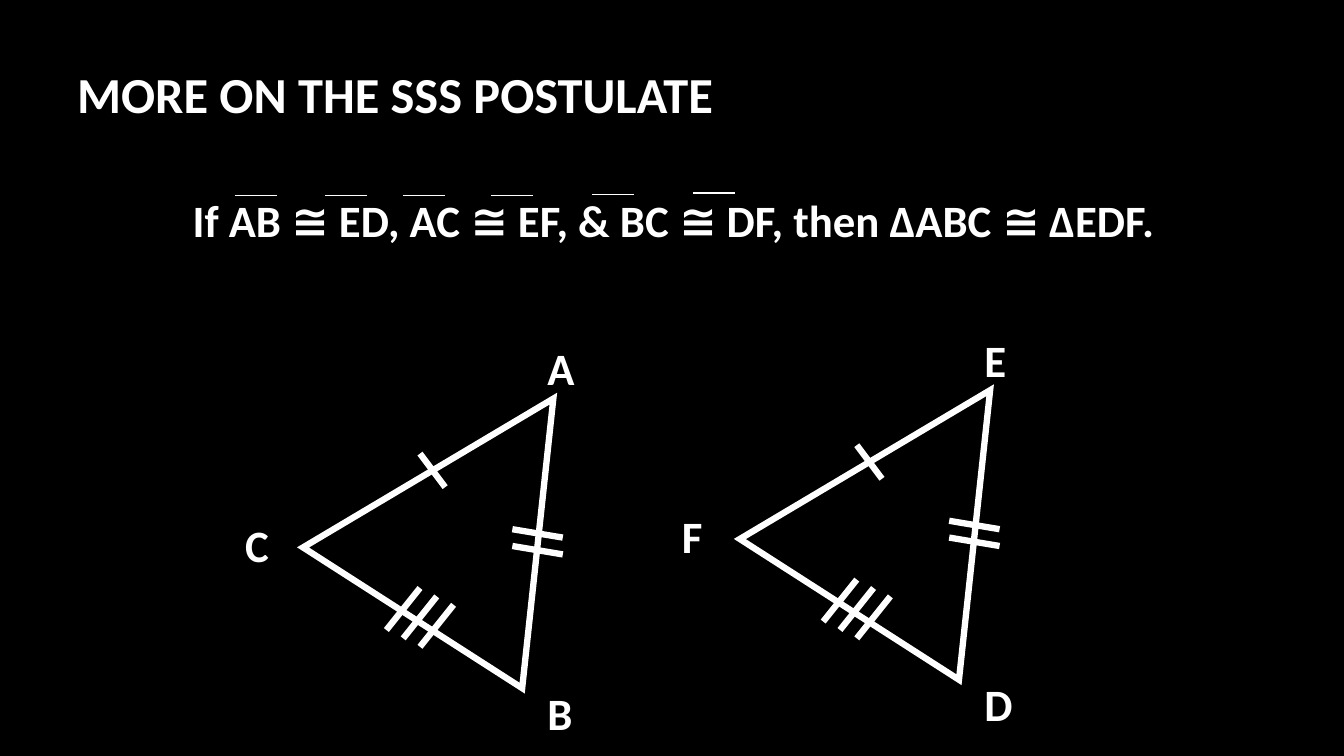
from dataclasses import dataclass
from typing import NamedTuple

from lxml.etree import SubElement as Sub
from pptx import Presentation
from pptx.dml.color import RGBColor as RGB
from pptx.enum.shapes import MSO_CONNECTOR as Conn, MSO_SHAPE as Shape
from pptx.enum.text import MSO_ANCHOR as Anchor, MSO_AUTO_SIZE as Auto
from pptx.oxml.ns import qn
from pptx.util import Emu, Pt


@dataclass(frozen=True)
class Theme:
    back: RGB = RGB(0, 0, 0)
    ink: RGB = RGB(255, 255, 255)
    font: str = "Calibri"
    title: int = 36
    body: int = 32
    side: float = 4.5
    bar: float = 1


class Mark(NamedTuple):
    x1: int
    y1: int
    x2: int
    y2: int


class Label(NamedTuple):
    text: str
    x: int
    y: int
    w: int
    h: int
    wrap: bool


class Figure(NamedTuple):
    dx: int
    dy: int
    names: str
    widths: tuple[int, int, int]


THEME = Theme()
SPOTS = ((512, 320, 60, True), (512, 648, 61, False), (224, 488, 61, False))
FIGURES = (
    Figure(0, 0, "ABC", (104, 43, 42)),
    Figure(416, -8, "EDF", (104, 46, 39)),
)
TICKS = (
    Mark(400, 432, 424, 464),
    *(Mark(488, 504 + 16 * i, 536, 512 + 16 * i) for i in range(2)),
    *(Mark(368 + 16 * i, 600 + 8 * i, 400 + 16 * i, 560 + 8 * i) for i in range(3)),
)
BARS = ((224, 186), (310, 186), (384, 186), (468, 186), (564, 185), (660, 184))


def px(n: int) -> Emu:
    return Emu(n * 9525)


def write(slide, label: Label, size: int):
    box = slide.shapes.add_textbox(*map(px, label[1:5]))
    frame = box.text_frame
    frame.word_wrap = label.wrap
    para = frame.paragraphs[0]
    para.text = label.text
    font = para.font
    font.name, font.size, font.bold = THEME.font, Pt(size), True
    font.color.rgb = THEME.ink
    return frame


def stroke(slide, mark: Mark, width: float) -> None:
    line = slide.shapes.add_connector(Conn.STRAIGHT, *map(px, mark))
    line.line.color.rgb = THEME.ink
    line.line.width = Pt(width)
    Sub(line._element.spPr, qn("a:effectLst"))


def draw(slide, fig: Figure) -> None:
    dx, dy = fig.dx, fig.dy
    tri = slide.shapes.add_shape(
        Shape.ISOSCELES_TRIANGLE, px(336 + dx), px(360 + dy), px(248), px(248)
    )
    tri.rotation = 32.7
    tri.shadow.inherit = False
    tri.fill.background()
    tri.line.color.rgb = THEME.ink
    tri.line.width = Pt(THEME.side)
    Sub(tri.line._get_or_add_ln(), qn("a:miter"), lim="800000")
    for t in TICKS:
        stroke(slide, Mark(t.x1 + dx, t.y1 + dy, t.x2 + dx, t.y2 + dy), THEME.side)
    for name, wide, (x, y, high, wrap) in zip(fig.names, fig.widths, SPOTS):
        label = Label(name, x + dx, y + dy, wide, high, wrap)
        write(slide, label, THEME.body).auto_size = Auto.SHAPE_TO_FIT_TEXT


def main() -> None:
    deck = Presentation()
    deck.slide_width, deck.slide_height = px(1280), px(720)
    slide = deck.slides.add_slide(deck.slide_layouts[6])
    fill = slide.background.fill
    fill.solid()
    fill.fore_color.rgb = THEME.back

    title = Label("MORE ON THE SSS POSTULATE", 64, 29, 1152, 120, True)
    write(slide, title, THEME.title).vertical_anchor = Anchor.MIDDLE

    claim = "If AB ≅ ED, AC ≅ EF, & BC ≅ DF, then ΔABC ≅ ΔEDF."
    frame = write(slide, Label(claim, 174, -49, 940, 516, True), THEME.body)
    frame.vertical_anchor = Anchor.MIDDLE
    para = frame.paragraphs[0]
    para.space_after = Pt(10)
    props = para._p.get_or_add_pPr()
    props.set("marL", str(px(30)))
    props.set("indent", str(px(-30)))

    for fig in FIGURES:
        draw(slide, fig)
    for x, y in BARS:
        stroke(slide, Mark(x, y, x + 40, y), THEME.bar)
    deck.save("out.pptx")


if __name__ == "__main__":
    main()
